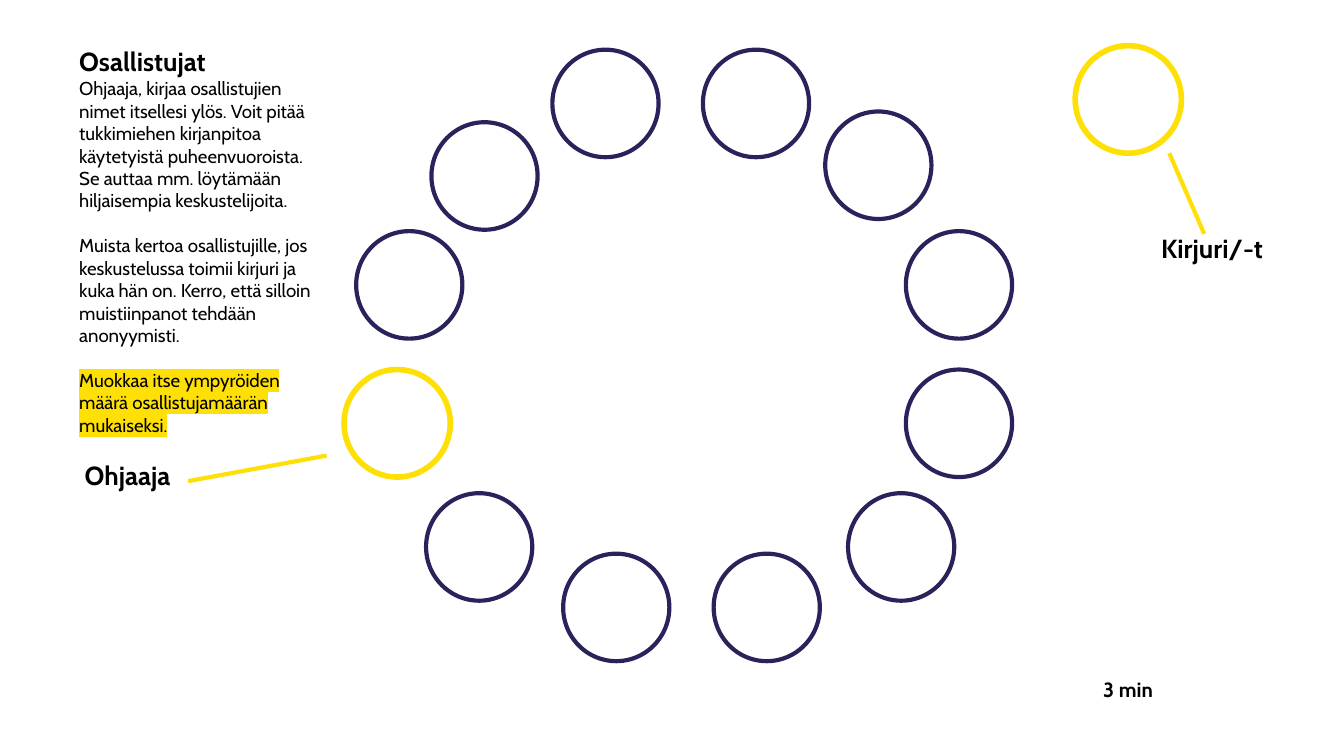
from lxml.etree import SubElement
from pptx import Presentation
from pptx.dml.color import RGBColor
from pptx.enum.shapes import MSO_CONNECTOR, MSO_SHAPE
from pptx.enum.text import PP_ALIGN
from pptx.oxml.ns import qn
from pptx.util import Emu, Pt

NAVY, GOLD, BLACK = "29235C", "FFE006", "000000"
FONT = "Cabin"

# Left and top of each seat, clockwise from the top
SEATS = [(523, 37), (614, 83), (674, 172), (674, 275), (631, 367), (531, 412),
         (419, 412), (317, 367), (265, 172), (321, 91), (411, 37)]

NOTES = [
    "Ohjaaja, kirjaa osallistujien nimet itsellesi ylös. Voit pitää "
    "tukkimiehen kirjanpitoa käytetyistä puheenvuoroista. Se auttaa mm. "
    "löytämään hiljaisempia keskustelijoita.",
    "Muista kertoa osallistujille, jos keskustelussa toimii kirjuri ja kuka "
    "hän on. Kerro, että silloin muistiinpanot tehdään anonyymisti.",
    "Muokkaa itse ympyröiden määrä osallistujamäärän mukaiseksi.",
]


def px(n):
    """100 px to the inch."""
    return Emu(n * 9144)


def color(code):
    return RGBColor.from_string(code)


def add_box(slide, left, top, width, height, inset=16):
    box = slide.shapes.add_textbox(px(left), px(top), px(width), px(height))
    frame = box.text_frame
    frame.word_wrap = True
    frame.margin_left = frame.margin_right = px(inset)
    frame.margin_top = frame.margin_bottom = px(inset)
    return frame


def style(para, text, size, bold=False):
    run = para.add_run()
    run.text = text
    font = para.font
    font.name, font.size, font.bold = FONT, Pt(size), bold
    font.color.rgb = color(BLACK)
    return run


def add_role(slide, text, left, top):
    frame = add_box(slide, left, top, 129, 190)
    frame.margin_top = px(20)
    style(frame.paragraphs[0], text, 14, bold=True)


def add_time(slide, text):
    frame = add_box(slide, 811, 491, 98, 39, inset=10)
    para = frame.paragraphs[0]
    style(para, text, 11, bold=True)
    para.alignment = PP_ALIGN.JUSTIFY
    para.line_spacing = 1.15


def mark(run, code):
    """Highlight a run."""
    light = SubElement(run.font._element, qn("a:highlight"))
    SubElement(light, qn("a:srgbClr")).set("val", code)


def add_ring(slide, left, top, code=NAVY, weight=2.25):
    ring = slide.shapes.add_shape(
        MSO_SHAPE.OVAL, px(left), px(top), px(79), px(80))
    ring.shadow.inherit = False
    ring.fill.background()
    ring.line.color.rgb = color(code)
    ring.line.width = Pt(weight)


def add_line(slide, x1, y1, x2, y2):
    line = slide.shapes.add_connector(
        MSO_CONNECTOR.STRAIGHT, px(x1), px(y1), px(x2), px(y2))
    line.line.color.rgb = color(GOLD)
    line.line.width = Pt(2.25)
    SubElement(line._element.spPr, qn("a:effectLst"))


def add_notes(slide):
    frame = add_box(slide, 43, 18, 207, 325)
    style(frame.paragraphs[0], "Osallistujat", 14, bold=True)
    for i, text in enumerate(NOTES):
        para = frame.add_paragraph()
        para.space_before = Pt(12 if i else 0)
        run = style(para, text, 10)
    mark(run, GOLD)


def main():
    # Wide 16:9 slide
    deck = Presentation()
    deck.slide_width = px(1000)
    deck.slide_height = Emu(px(1000) * 9 // 16)
    slide = deck.slides.add_slide(deck.slide_layouts[6])

    # Instructions
    add_notes(slide)

    # Circle of participants
    for left, top in SEATS:
        add_ring(slide, left, top)

    # Facilitator
    add_ring(slide, 256, 275, GOLD, 3)
    add_role(slide, "Ohjaaja", 47, 328)
    add_line(slide, 140, 358, 243, 339)

    # Note taker
    add_ring(slide, 800, 34, GOLD, 3)
    add_role(slide, "Kirjuri/-t", 848, 159)
    add_line(slide, 870, 114, 896, 174)

    # Duration
    add_time(slide, "3 min")

    deck.save("out.pptx")


if __name__ == "__main__":
    main()
